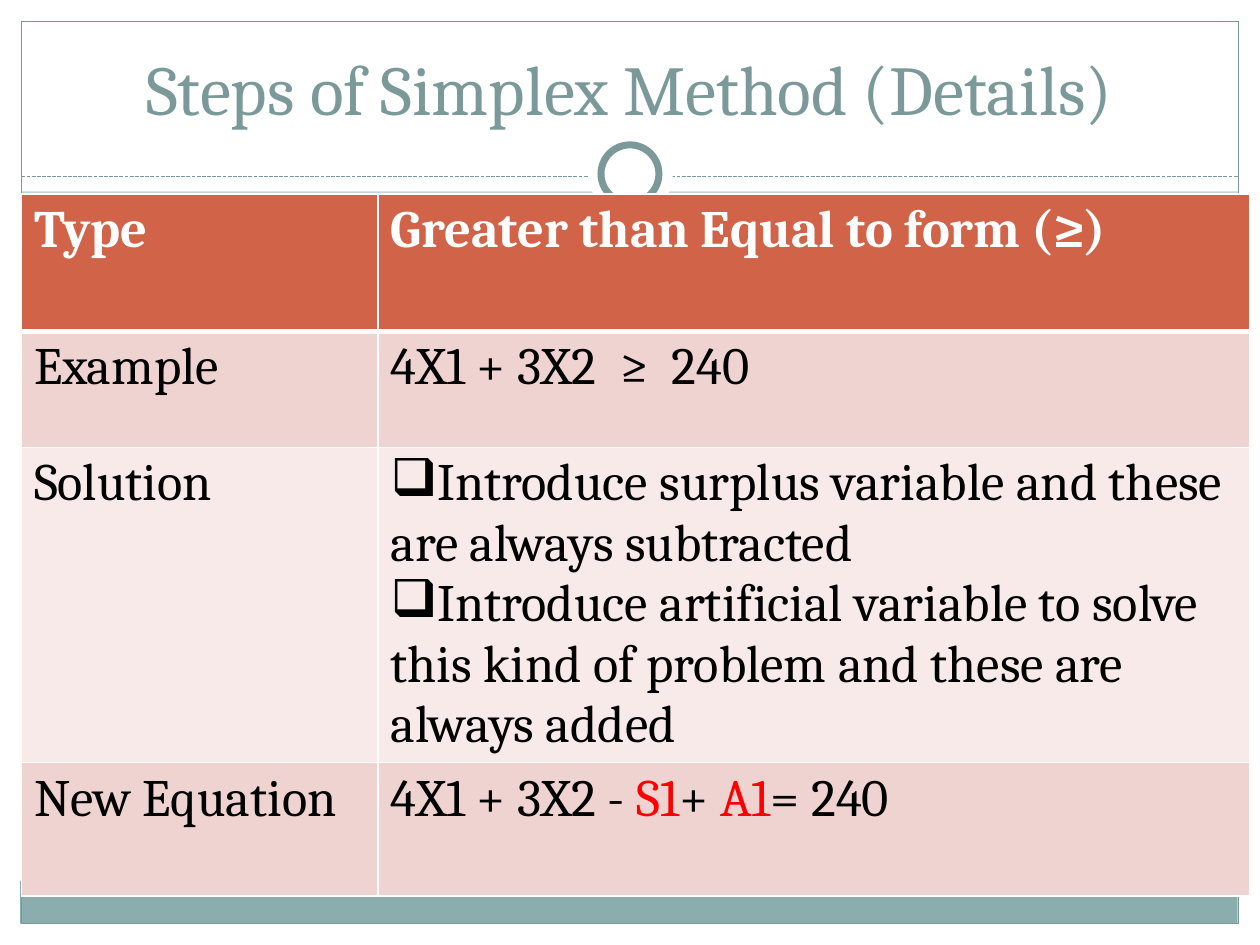
from lxml import etree
from pptx import Presentation
from pptx.dml.color import RGBColor
from pptx.enum.dml import MSO_LINE
from pptx.enum.shapes import MSO_CONNECTOR, MSO_SHAPE
from pptx.enum.text import MSO_ANCHOR, PP_ALIGN
from pptx.oxml.ns import qn
from pptx.util import Inches, Pt

RECTANGLE, OVAL = MSO_SHAPE.RECTANGLE, MSO_SHAPE.OVAL
STRAIGHT = MSO_CONNECTOR.STRAIGHT
DASH = MSO_LINE.SQUARE_DOT
BOTTOM = MSO_ANCHOR.BOTTOM
CENTER = PP_ALIGN.CENTER

WHITE = RGBColor(0xFF, 0xFF, 0xFF)
BLACK = RGBColor(0, 0, 0)
RED = RGBColor(0xFF, 0, 0)
BACKGROUND = RGBColor(0xC5, 0xD1, 0xD7)
TEAL = RGBColor(0x8C, 0xAD, 0xAE)
SLATE = RGBColor(0x7C, 0x99, 0x9A)
ORANGE = RGBColor(0xD1, 0x63, 0x49)
PINK = RGBColor(0xEE, 0xD3, 0xD0)
PALE_PINK = RGBColor(0xF7, 0xEA, 0xE9)
FONT = "Cambria"


def add_span(para, text, size, color, bold=False):
    span = para.add_run()
    span.text = text
    span.font.name = FONT
    span.font.size = Pt(size)
    span.font.bold = bold
    span.font.color.rgb = color


def set_border(properties, side, points):
    line = etree.SubElement(properties, qn(f"a:ln{side}"), w=str(Pt(points)))
    fill = etree.SubElement(line, qn("a:solidFill"))
    etree.SubElement(fill, qn("a:srgbClr"), val=str(WHITE))


deck = Presentation()
deck.slide_width, deck.slide_height = Inches(10), Inches(7.5)
page = deck.slides.add_slide(deck.slide_layouts[6])
page.background.fill.solid()
page.background.fill.fore_color.rgb = BACKGROUND

frame_shapes = [
    (RECTANGLE, 0, 7.33, 10, 0.17, WHITE, None),
    (RECTANGLE, 0, 0, 10, 1.52, WHITE, None),
    (RECTANGLE, 0, 0, 0.17, 7.5, WHITE, None),
    (RECTANGLE, 9.83, 0, 0.17, 7.5, WHITE, None),
    (RECTANGLE, 0.16, 6.99, 9.66, 0.34, TEAL, None),
    (RECTANGLE, 0.17, 0.17, 9.66, 7.16, None, 0.75),
    (OVAL, 4.67, 1.05, 0.67, 0.67, WHITE, None),
    (OVAL, 4.77, 1.15, 0.46, 0.46, WHITE, 4),
]
divider = page.shapes.add_connector(
    STRAIGHT, Inches(0.17), Inches(1.4), Inches(9.83), Inches(1.4))
divider.line.color.rgb = SLATE
divider.line.width = Pt(0.75)
divider.line.dash_style = DASH
etree.SubElement(divider._element.spPr, qn("a:effectLst"))

for kind, left, top, width, height, fill, outline in frame_shapes:
    if kind == OVAL and outline is None:
        page.shapes._spTree.append(divider._element)
    shape = page.shapes.add_shape(
        kind, Inches(left), Inches(top), Inches(width), Inches(height))
    shape.shadow.inherit = False
    if fill is None:
        shape.fill.background()
    else:
        shape.fill.solid()
        shape.fill.fore_color.rgb = fill
    if outline is None:
        shape.line.fill.background()
    else:
        shape.line.color.rgb = SLATE
        shape.line.width = Pt(outline)

rows = [
    (1.09, ORANGE, "Type", [[("Greater than Equal to form (≥)", WHITE)]]),
    (0.92, PINK, "Example", [[("4X1 + 3X2  ≥  240", BLACK)]]),
    (2.5, PALE_PINK, "Solution", [
        [("Introduce surplus variable and these are always subtracted", BLACK)],
        [("Introduce artificial variable to solve this kind of problem "
          "and these are always added", BLACK)],
    ]),
    (1.06, PINK, "New Equation", [[
        ("4X1 + 3X2 - ", BLACK), ("S1", RED), ("+ ", BLACK),
        ("A1", RED), ("= 240", BLACK),
    ]]),
]
table = page.shapes.add_table(
    len(rows), 2, Inches(0.17), Inches(1.54), Inches(9.75), Inches(5.57)).table
table.columns[0].width = Inches(2.83)
table.columns[1].width = Inches(6.92)

for index, (height, fill, label, details) in enumerate(rows):
    table.rows[index].height = Inches(height)
    header = index == 0
    label_color = WHITE if header else BLACK
    for cell, paragraphs in zip(table.rows[index].cells,
                                ([[(label, label_color)]], details)):
        properties = cell._tc.get_or_add_tcPr()
        for side in "LRTB":
            thick = (header and side == "B") or (index == 1 and side == "T")
            set_border(properties, side, 3 if thick else 1)
        cell.fill.solid()
        cell.fill.fore_color.rgb = fill
        for number, spans in enumerate(paragraphs):
            text_frame = cell.text_frame
            para = text_frame.add_paragraph() if number else text_frame.paragraphs[0]
            if len(paragraphs) > 1:
                bullet = para._p.get_or_add_pPr()
                bullet.set("marL", "0")
                bullet.set("indent", "0")
                etree.SubElement(bullet, qn("a:buChar"), char="❑")
            for text, color in spans:
                add_span(para, text, 30, color, header)

title = page.shapes.add_textbox(
    Inches(0.33), Inches(0.25), Inches(9.33), Inches(0.83))
title.text_frame.word_wrap = True
title.text_frame.vertical_anchor = BOTTOM
heading = title.text_frame.paragraphs[0]
heading.alignment = CENTER
add_span(heading, "Steps of Simplex Method (Details)", 40, SLATE)

deck.save("out.pptx")
